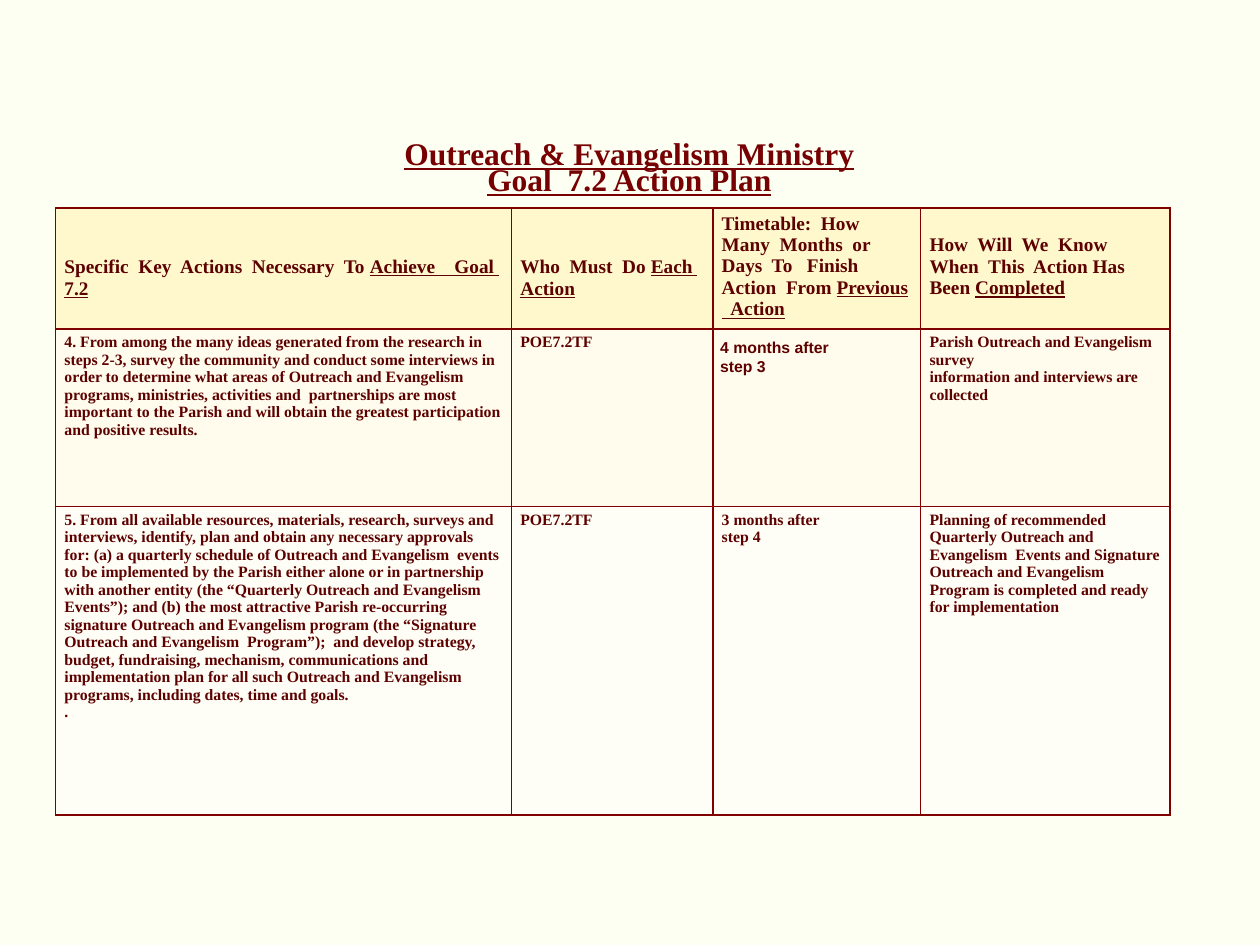
from lxml import etree
from pptx import Presentation, util as u
from pptx.dml.color import RGBColor
from pptx.enum import text
from pptx.oxml import ns

COLORS = {"background": "FEFFF3", "title": "760002", "text": "5D0100", "border": "800000",
          "header": "FFF8CD", "step 4": "FFFCED", "step 5": "FFFEF6"}
SERIF = "Times New Roman"


def add_run(paragraph, wording, size, color, font=SERIF, underline=False):
    run = paragraph.add_run()
    run.text = wording
    run.font.name, run.font.size, run.font.bold = font, u.Pt(size), True
    run.font.underline = underline
    run.font.color.rgb = RGBColor.from_string(COLORS[color])


def format_cell(cell, fill, margins):
    cell.margin_left, cell.margin_top, cell.margin_right, cell.margin_bottom = map(u.Cm, margins)
    properties = cell._tc.get_or_add_tcPr()
    for side in ("lnL", "lnR", "lnT", "lnB"):
        line = etree.SubElement(properties, ns.qn(f"a:{side}"), w=str(u.Pt(1)))
        solid = etree.SubElement(line, ns.qn("a:solidFill"))
        etree.SubElement(solid, ns.qn("a:srgbClr"), val=COLORS["border"])
    cell.fill.solid()
    cell.fill.fore_color.rgb = RGBColor.from_string(COLORS[fill])


presentation = Presentation()
presentation.slide_width, presentation.slide_height = u.Cm(25.4), u.Cm(19.05)
slide = presentation.slides.add_slide(presentation.slide_layouts[5])
slide.background.fill.solid()
slide.background.fill.fore_color.rgb = RGBColor.from_string(COLORS["background"])

# Title
title = slide.shapes.title
title.left, title.top, title.width, title.height = map(u.Cm, (4.42, 2.24, 16.54, 2.39))
frame = title.text_frame
frame.auto_size = text.MSO_AUTO_SIZE.NONE
frame.vertical_anchor = text.MSO_ANCHOR.MIDDLE
paragraph = frame.paragraphs[0]
paragraph.alignment = text.PP_ALIGN.CENTER
paragraph.line_spacing = 0.7
add_run(paragraph, "Outreach & Evangelism Ministry", 18, "title", underline=True)
paragraph.add_line_break()
add_run(paragraph, "Goal  7.2 Action Plan", 18, "title", underline=True)

# Table grid
widths = [9.19, 4.06, 4.19, 5.03]
heights = [2.44, 3.58, 6.22]
table = slide.shapes.add_table(len(heights), len(widths), u.Cm(1.12), u.Cm(4.19),
                               u.Cm(sum(widths)), u.Cm(sum(heights))).table
table.first_row = table.horz_banding = False
for column, width in zip(table.columns, widths):
    column.width = u.Cm(width)
for row, height in zip(table.rows, heights):
    row.height = u.Cm(height)

# Header row: plain start, underlined end, top margin
headers = [
    ("Specific  Key  Actions  Necessary  To ", "Achieve    Goal  7.2", 0.98),
    ("Who  Must  Do ", "Each  Action", 0.98),
    ("Timetable:  How Many  Months  or Days  To   Finish  Action  From ",
     "Previous   Action", 0.1),
    ("How  Will  We  Know  When  This  Action Has  Been ", "Completed", 0.54),
]
for cell, (plain, underlined, top) in zip(table.rows[0].cells, headers):
    format_cell(cell, "header", (0.18, top, 0.18, 0.1))
    paragraph = cell.text_frame.paragraphs[0]
    add_run(paragraph, plain, 11, "text")
    add_run(paragraph, underlined, 11, "text", underline=True)

# Action rows: each cell is a list of paragraphs
actions = {
    "step 4": [
        ["4. From among the many ideas generated from the research in steps 2-3, survey the "
         "community and conduct some interviews in order to determine what areas of Outreach "
         "and Evangelism programs, ministries, activities and  partnerships are most important "
         "to the Parish and will obtain the greatest participation and positive results."],
        ["POE7.2TF"],
        ["4 months after", "step 3"],
        ["Parish Outreach and Evangelism  survey", "information and interviews are collected"],
    ],
    "step 5": [
        ["5. From all available resources, materials, research, surveys and interviews, identify, "
         "plan and obtain any necessary approvals for: (a) a quarterly schedule of Outreach and "
         "Evangelism  events to be implemented by the Parish either alone or in partnership with "
         "another entity (the “Quarterly Outreach and Evangelism  Events”); and (b) the most "
         "attractive Parish re-occurring signature Outreach and Evangelism program (the "
         "“Signature Outreach and Evangelism  Program”);  and develop strategy, budget, "
         "fundraising, mechanism, communications and implementation plan for all such Outreach "
         "and Evangelism programs, including dates, time and goals.", "."],
        ["POE7.2TF"],
        ["3 months after", "step 4"],
        ["Planning of recommended Quarterly Outreach and Evangelism  Events and Signature "
         "Outreach and Evangelism Program is completed and ready for implementation"],
    ],
}
for row, (step, contents) in zip(list(table.rows)[1:], actions.items()):
    for index, (cell, lines) in enumerate(zip(row.cells, contents)):
        sans = step == "step 4" and index == 2
        format_cell(cell, step, (0.15, 0.18, 0.15, 0) if sans else (0.18, 0.1, 0.18, 0.1))
        for number, line in enumerate(lines):
            frame = cell.text_frame
            paragraph = frame.add_paragraph() if number else frame.paragraphs[0]
            if sans:
                paragraph.line_spacing = 1.07
            add_run(paragraph, line, 9, "text", font="Arial" if sans else SERIF)

presentation.save("out.pptx")
